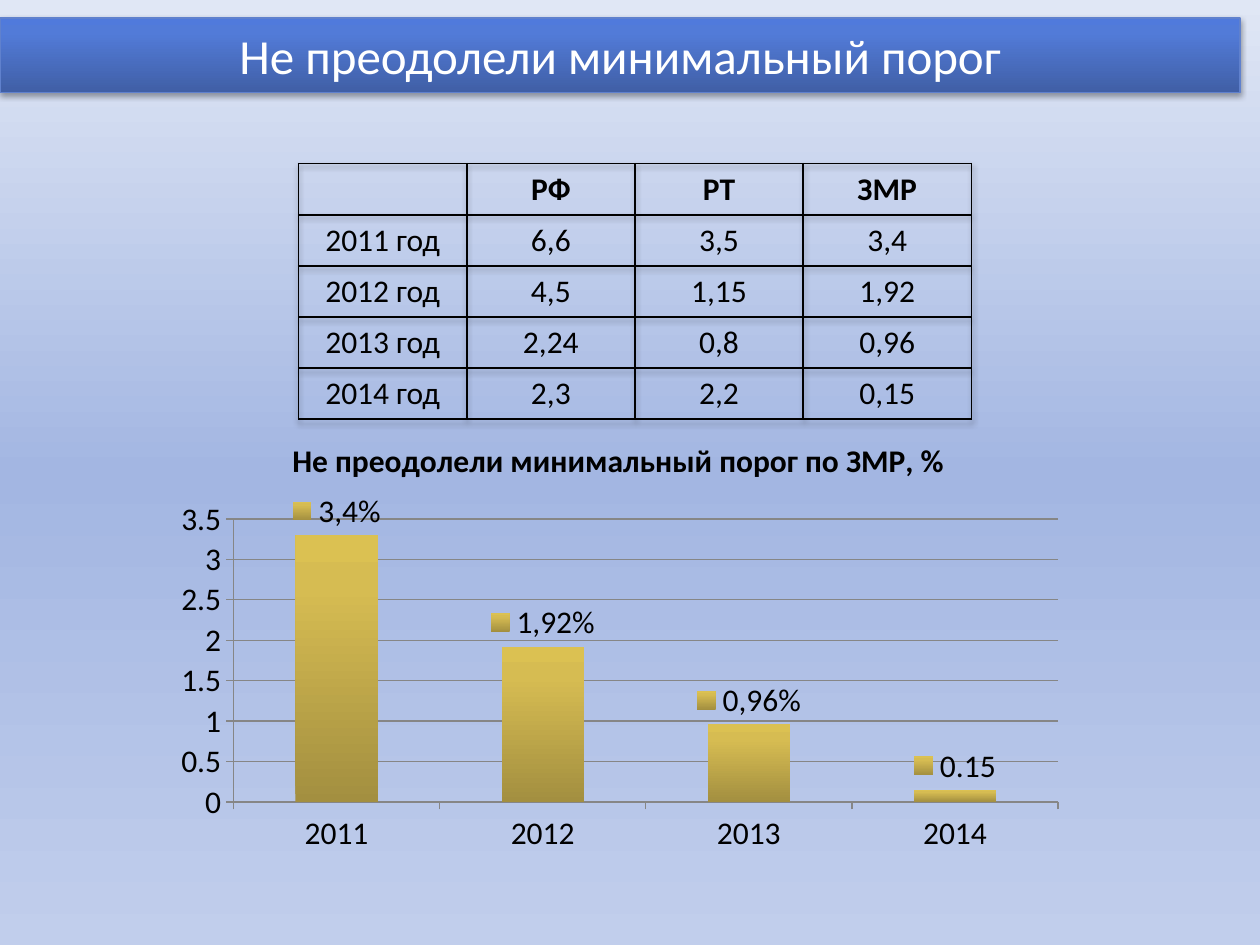
from lxml import etree
from pptx import Presentation
from pptx.chart.data import CategoryChartData
from pptx.dml.color import RGBColor
from pptx.enum.chart import XL_CHART_TYPE, XL_LABEL_POSITION, XL_TICK_MARK
from pptx.enum.text import MSO_ANCHOR, PP_ALIGN
from pptx.oxml.ns import qn
from pptx.util import Cm, Pt

COLUMNS = XL_CHART_TYPE.COLUMN_CLUSTERED
OUTSIDE_END = XL_LABEL_POSITION.OUTSIDE_END
TICK_OUT = XL_TICK_MARK.OUTSIDE
MIDDLE = MSO_ANCHOR.MIDDLE
CENTER = PP_ALIGN.CENTER

FONT = "Calibri"
BLACK = RGBColor(0x00, 0x00, 0x00)
WHITE = RGBColor(0xFF, 0xFF, 0xFF)
GRID_GREY = RGBColor(0x86, 0x86, 0x86)
BANNER_LINE = RGBColor(0x60, 0x81, 0xCD)

# Gradients as (percent, colour)
PAGE_STOPS = [(0, RGBColor(0xE0, 0xE7, 0xF5)), (50, RGBColor(0xA3, 0xB6, 0xE2)),
              (100, RGBColor(0xC1, 0xCE, 0xEC))]
BANNER_STOPS = [(0, RGBColor(0x40, 0x5F, 0xA6)), (80, RGBColor(0x52, 0x7B, 0xD8)),
                (100, RGBColor(0x50, 0x7A, 0xDC))]
BAR_STOPS = [(0, RGBColor(0xA3, 0x8F, 0x40)), (80, RGBColor(0xD6, 0xBC, 0x52)),
             (100, RGBColor(0xDB, 0xC1, 0x52))]

TABLE_ROWS = [
    ["", "РФ", "РТ", "ЗМР"],
    ["2011 год", "6,6", "3,5", "3,4"],
    ["2012 год", "4,5", "1,15", "1,92"],
    ["2013 год", "2,24", "0,8", "0,96"],
    ["2014 год", "2,3", "2,2", "0,15"],
]
CHART_TITLE = "Не преодолели минимальный порог по ЗМР, %"
YEARS = ["2011", "2012", "2013", "2014"]
SHARES = [3.3, 1.92, 0.96, 0.15]
BAR_LABELS = ["3,4%", "1,92%", "0,96%"]


def add_element(parent, tag, **attributes):
    child = etree.SubElement(parent, qn(tag))
    for name, value in attributes.items():
        child.set(name, str(value))
    return child


def set_gradient(fill, owner, stops, angle):
    """Give the fill inside the owner element any number of stops."""
    fill.gradient()
    gradient = next(owner.iter(qn("a:gradFill")))
    for child in list(gradient):
        gradient.remove(child)
    stop_list = add_element(gradient, "a:gsLst")
    for percent, color in stops:
        stop = add_element(stop_list, "a:gs", pos=percent * 1000)
        add_element(stop, "a:srgbClr", val=color)
    add_element(gradient, "a:lin", ang=angle * 60000, scaled=0)


def add_shadow(parent):
    effects = add_element(parent, "a:effectLst")
    shadow = add_element(effects, "a:outerShdw", blurRad=Pt(3.1), dist=Pt(1.8),
                         dir=90 * 60000, rotWithShape=0)
    color = add_element(shadow, "a:srgbClr", val=BLACK)
    add_element(color, "a:alpha", val=35000)
    return effects


def style_font(font, size, color, bold=False):
    font.name = FONT
    font.size = Pt(size)
    font.bold = bold
    font.color.rgb = color


def add_banner(page, text):
    banner = page.shapes.title
    banner.left, banner.top = Cm(0), Cm(0.36)
    banner.width, banner.height = Cm(25), Cm(1.5)
    properties = banner._element.spPr
    outline = add_element(properties, "a:prstGeom", prst="homePlate")
    add_element(outline, "a:avLst")
    set_gradient(banner.fill, properties, BANNER_STOPS, 270)
    banner.line.color.rgb = BANNER_LINE
    banner.line.width = Pt(0.75)
    add_shadow(properties)

    frame = banner.text_frame
    frame.text = text
    frame.vertical_anchor = MIDDLE
    para = frame.paragraphs[0]
    para.alignment = CENTER
    style_font(para.font, 28, WHITE)


def set_borders(cell):
    properties = cell._tc.get_or_add_tcPr()
    for index, side in enumerate(("a:lnL", "a:lnR", "a:lnT", "a:lnB")):
        line = add_element(properties, side, w=Pt(1))
        solid = add_element(line, "a:solidFill")
        add_element(solid, "a:srgbClr", val=BLACK)
        properties.insert(index, line)


def add_results_table(page, rows):
    column_width, row_height = Cm(3.39), Cm(1.03)
    columns = len(rows[0])
    table = page.shapes.add_table(len(rows), columns, Cm(6.02), Cm(3.3),
                                  column_width * columns, row_height * len(rows)).table
    table.first_row = table.horz_banding = False
    table_properties = table._tbl.tblPr
    table_properties.insert(0, add_shadow(table_properties))
    for row_index, values in enumerate(rows):
        table.rows[row_index].height = row_height
        for column_index, value in enumerate(values):
            cell = table.cell(row_index, column_index)
            cell.text = value
            cell.vertical_anchor = MIDDLE
            cell.fill.background()
            set_borders(cell)
            para = cell.text_frame.paragraphs[0]
            para.alignment = CENTER
            style_font(para.font, 18, BLACK, bold=row_index == 0)


def set_plot_area(chart, **fractions):
    """Fix the inner plot area as fractions of the chart."""
    plot_area = next(chart._chartSpace.iter(qn("c:plotArea")))
    for old in plot_area.findall(qn("c:layout")):
        plot_area.remove(old)
    layout = add_element(plot_area, "c:layout")
    plot_area.insert(0, layout)
    manual = add_element(layout, "c:manualLayout")
    add_element(manual, "c:layoutTarget", val="inner")
    for side in ("x", "y"):
        add_element(manual, f"c:{side}Mode", val="edge")
    for side, fraction in fractions.items():
        add_element(manual, f"c:{side}", val=fraction)


def add_share_chart(page):
    data = CategoryChartData()
    data.categories = YEARS
    data.add_series(CHART_TITLE, SHARES)
    chart = page.shapes.add_chart(COLUMNS, Cm(3.23), Cm(8.41), Cm(18.47), Cm(8.92),
                                  data).chart
    style_font(chart.font, 18, BLACK)
    chart.has_legend = False
    chart.chart_title.text_frame.text = CHART_TITLE
    style_font(chart.chart_title.text_frame.paragraphs[0].font, 18, BLACK, bold=True)
    set_plot_area(chart, x=0.08, y=0.23, w=0.9, h=0.64)

    # Axes
    values = chart.value_axis
    values.minimum_scale, values.maximum_scale, values.major_unit = 0, 3.5, 0.5
    values.major_gridlines.format.line.color.rgb = GRID_GREY
    for axis in (chart.category_axis, values):
        axis.major_tick_mark = TICK_OUT
        axis.format.line.color.rgb = GRID_GREY

    # Bars and their labels
    plot = chart.plots[0]
    plot.gap_width = 150
    plot.vary_by_categories = False
    series = plot.series[0]
    set_gradient(series.format.fill, series._element, BAR_STOPS, 270)
    labels = series.data_labels
    labels.show_value = True
    labels.position = OUTSIDE_END
    for index, text in enumerate(BAR_LABELS):
        label = series.points[index].data_label
        label.text_frame.text = text
        label.position = OUTSIDE_END
        style_font(label.text_frame.paragraphs[0].font, 18, BLACK)
    for key in series._element.iter(qn("c:showLegendKey")):
        key.set("val", "1")


def main():
    deck = Presentation()
    deck.slide_width, deck.slide_height = Cm(25.4), Cm(19.05)
    page = deck.slides.add_slide(deck.slide_layouts.get_by_name("Title Only"))
    set_gradient(page.background.fill, page._element, PAGE_STOPS, 90)
    add_banner(page, "Не преодолели минимальный порог")
    add_results_table(page, TABLE_ROWS)
    add_share_chart(page)
    deck.save("out.pptx")


if __name__ == "__main__":
    main()
